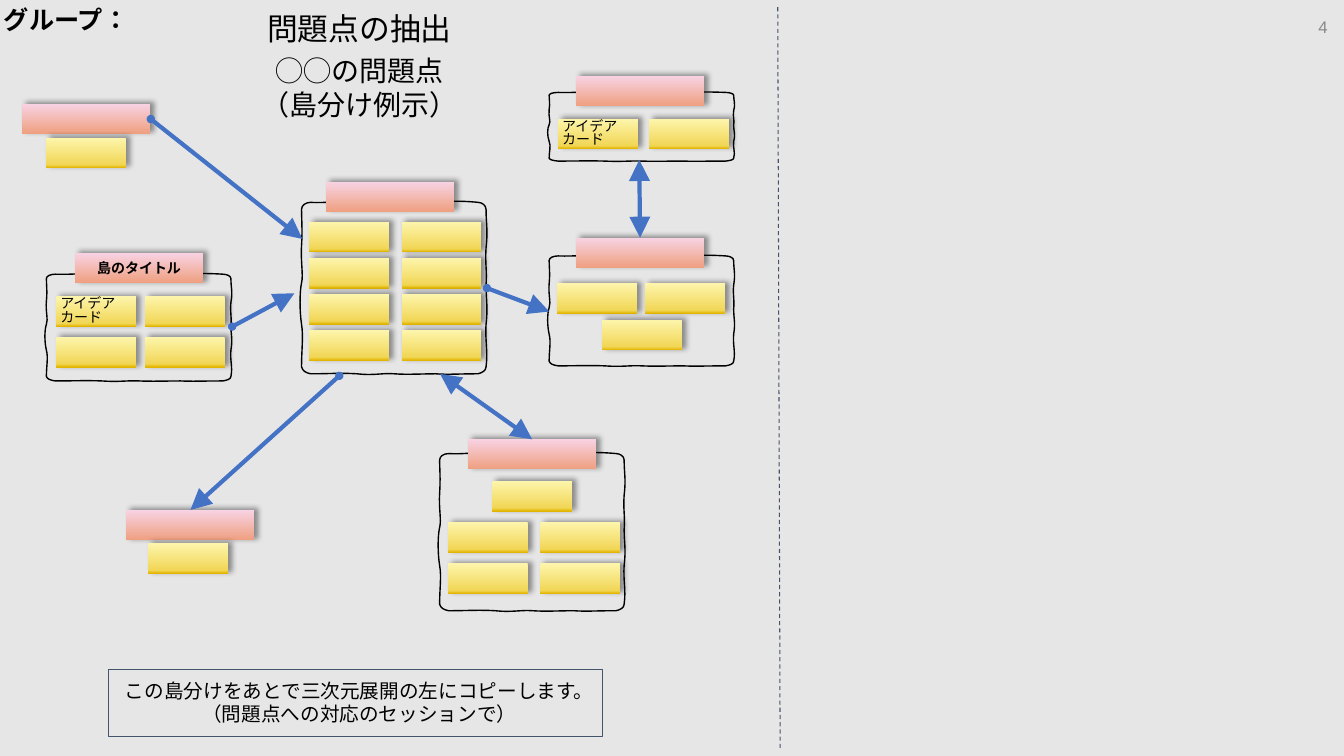
"""Build a slide of idea cards sorted into linked islands."""
from itertools import product
from lxml.etree import SubElement
from pptx import Presentation
from pptx.dml.color import RGBColor
from pptx.enum.dml import MSO_LINE
from pptx.enum.lang import MSO_LANGUAGE_ID
from pptx.enum.shapes import MSO_CONNECTOR, MSO_SHAPE
from pptx.enum.text import MSO_ANCHOR, PP_ALIGN
from pptx.oxml import parse_xml
from pptx.oxml.ns import nsdecls, qn
from pptx.util import Cm, Pt

HUES = {"back": "E7E6E6", "ink": "000000", "rule": "44546A",
        "arrow": "4472C4", "page": "888888"}
CARD = [(0, "FDF5AC"), (90, "F1D656"), (100, "E3B500")]
TITLE = [(0, "F8D3E4"), (100, "EFA081")]
WIDE, TALL = 4.65, 0.76
CARD_W, TITLE_W = 2.01, 3.23

CURVES = [
    (0, 3, 4, 0, 9, 0), (27, 1, 31, -2, 52, 0), (73, 1, 71, -1, 90, 0),
    (109, 1, 119, 1, 128, 0), (138, -1, 156, -2, 175, 0),
    (179, 0, 183, 3, 183, 7), (183, 22, 185, 27, 183, 45),
    (182, 62, 184, 66, 183, 82), (183, 97, 185, 103, 183, 121),
    (182, 138, 185, 147, 183, 163), (183, 167, 179, 169, 175, 170),
    (155, 170, 145, 171, 133, 170), (121, 170, 104, 171, 92, 170),
    (80, 169, 73, 172, 55, 170), (38, 169, 28, 170, 9, 170),
    (4, 169, 1, 167, 0, 163), (0, 146, 2, 133, 0, 121),
    (-2, 108, -2, 89, 0, 80), (2, 72, -1, 59, 0, 43), (1, 27, 0, 16, 0, 7)]


def hue(name):
    """Return a named colour."""
    return RGBColor.from_string(HUES[name])


def write(shape, text, size, align=PP_ALIGN.LEFT, bold=False, inset=0.1,
          anchor=MSO_ANCHOR.TOP, tone="ink", lead=None):
    """Set text in a shape and format its runs."""
    frame = shape.text_frame
    frame.text = text
    frame.word_wrap = True
    frame.vertical_anchor = anchor
    frame.margin_left = frame.margin_right = Cm(inset)
    frame.margin_top = frame.margin_bottom = Cm(inset)
    for para in frame.paragraphs:
        para.alignment = align
        if lead:
            para.line_spacing = lead
        for run in para.runs:
            run.font.size = Pt(size)
            run.font.name = "Arial"
            run.font.bold = bold
            run.font.language_id = MSO_LANGUAGE_ID.JAPANESE
            run.font.color.rgb = hue(tone)


def label(slide, box, text, size, **style):
    """Add a text box."""
    write(slide.shapes.add_textbox(*map(Cm, box)), text, size, **style)


def plate(slide, box, stops):
    """Add a shaded rectangle with a soft shadow."""
    shape = slide.shapes.add_shape(MSO_SHAPE.RECTANGLE, *map(Cm, box))
    shape.line.fill.background()
    shape.shadow.inherit = False
    props = shape.element.spPr
    marks = "".join(f'<a:gs pos="{at * 1000}"><a:srgbClr val="{tone}"/></a:gs>'
                    for at, tone in stops)
    props.insert(2, parse_xml(
        f'<a:gradFill {nsdecls("a")} rotWithShape="1"><a:gsLst>{marks}</a:gsLst>'
        '<a:lin ang="5400000" scaled="0"/></a:gradFill>'))
    props.find(qn("a:effectLst")).append(parse_xml(
        f'<a:outerShdw {nsdecls("a")} blurRad="{Pt(4)}" dist="{Pt(3)}" '
        'dir="20400000" algn="ctr" rotWithShape="0"><a:srgbClr val="000000">'
        '<a:alpha val="40000"/></a:srgbClr></a:outerShdw>'))
    return shape


def outline(slide, left, top, high):
    """Draw the wavy border of an island."""
    def scale(x, y):
        return Cm(x * WIDE / 183), Cm(y * high / 170)

    pen = slide.shapes.build_freeform(*scale(0, 7))
    pen.add_line_segments([scale(*curve[4:]) for curve in CURVES], close=True)
    shape = pen.convert_to_shape(Cm(left), Cm(top))
    for side, curve in zip(list(shape.element.iter(qn("a:lnTo"))), CURVES):
        side.tag = qn("a:cubicBezTo")
        for i in (2, 0):
            x, y = scale(*curve[i:i + 2])
            side.insert(0, parse_xml(
                f'<a:pt {nsdecls("a")} x="{x}" y="{y}"/>'))
    shape.shadow.inherit = False
    shape.fill.background()
    shape.line.color.rgb = hue("ink")
    shape.line.width = Pt(1)


def island(slide, left, top, high, head, cards, title="", idea=""):
    """Place a title and cards inside an optional border."""
    if high:
        outline(slide, left, top, high)
    bar = plate(slide, (left + head[0], top + head[1], TITLE_W, TALL), TITLE)
    if title:
        write(bar, title, 10, PP_ALIGN.CENTER, True, anchor=MSO_ANCHOR.MIDDLE)
    for i, (x, y) in enumerate(cards):
        card = plate(slide, (left + x, top + y, CARD_W, TALL), CARD)
        if idea and i == 0:
            write(card, idea, 10, anchor=MSO_ANCHOR.MIDDLE, lead=0.8)


def link(slide, ends, tone, width, head=None, tail=None):
    """Draw a straight line with optional end marks."""
    line = slide.shapes.add_connector(MSO_CONNECTOR.STRAIGHT, *map(Cm, ends))
    line.line.color.rgb = hue(tone)
    line.line.width = Pt(width)
    for tag, kind in (("a:headEnd", head), ("a:tailEnd", tail)):
        if kind:
            size = "sm" if kind == "oval" else "lg"
            SubElement(line.line._get_or_add_ln(), qn(tag), type=kind,
                       w=size, len=size)
    SubElement(line.element.spPr, qn("a:effectLst"))
    return line


def banner(slide):
    """Add the headings, page number and divider."""
    mid = PP_ALIGN.CENTER
    rule = link(slide, (19.6, 0.18, 19.66, 18.9), "rule", 0.75)
    rule.line.dash_style = MSO_LINE.DASH
    label(slide, (0, 0, 7.16, 1.24), "グループ：", 18, bold=True)
    label(slide, (6.1, 0, 5.92, 1.45), "問題点の抽出", 22, align=mid, inset=0.25)
    label(slide, (3.28, 1.25, 11.58, 1.24), "◯◯の問題点\n（島分け例示）", 20,
          align=mid)
    label(slide, (26.09, 0.17, 7.62, 1.02), "4", 12, align=PP_ALIGN.RIGHT,
          inset=0.25, anchor=MSO_ANCHOR.MIDDLE, tone="page")


def footer(slide, left, top):
    """Add the framed remark at the bottom."""
    box = slide.shapes.add_shape(MSO_SHAPE.RECTANGLE, Cm(left), Cm(top),
                                 Cm(12.45), Cm(1.68))
    box.shadow.inherit = False
    box.fill.solid()
    box.fill.fore_color.rgb = hue("back")
    box.line.color.rgb = hue("rule")
    box.line.width = Pt(0.75)
    label(slide, (left, top - 0.02, 12.64, 1.7),
          "この島分けをあとで三次元展開の左にコピーします。\n"
          "（問題点への対応のセッションで）", 14, align=PP_ALIGN.CENTER, inset=0.25)


def chart(slide):
    """Place all islands and the arrows between them."""
    idea = "アイデア\nカード"
    island(slide, 0.56, 2.61, 0, (0, 0), [(0.6, 0.86)])
    island(slide, 3.18, 12.85, 0, (0, 0), [(0.56, 0.84)])
    island(slide, 1.17, 6.91, 2.69, (0.72, -0.54),
           [(x, y) for y, x in product((0.56, 1.58), (0.25, 2.48))],
           "島のタイトル", idea)
    island(slide, 7.6, 5.1, 4.32, (0.62, -0.52),
           [(x, 0.49 + 0.91 * i) for i, x in product(range(4), (0.19, 2.52))])
    island(slide, 13.84, 2.33, 1.73, (0.68, -0.42),
           [(0.23, 0.66), (2.52, 0.66)], idea=idea)
    island(slide, 13.84, 6.45, 2.77, (0.68, -0.46),
           [(0.2, 0.69), (2.42, 0.69), (1.33, 1.61)])
    island(slide, 11.08, 11.43, 3.96, (0.72, -0.37),
           [(1.33, 0.69)] + [(x, y) for y, x in
                             product((1.73, 2.77), (0.21, 2.54))])
    for ends in ((3.8, 3, 7.62, 6.02), (8.55, 9.47, 4.8, 12.85),
                 (12.27, 7.26, 13.84, 7.85), (5.85, 8.23, 7.42, 7.39)):
        link(slide, ends, "arrow", 3, "oval", "triangle")
    for ends in ((16.13, 5.99, 16.11, 4.03), (13.41, 11.07, 11.09, 9.42)):
        link(slide, ends, "arrow", 3, "triangle", "triangle")


def main():
    """Build and save the slide."""
    deck = Presentation()
    deck.slide_width, deck.slide_height = Cm(33.87), Cm(19.05)
    slide = deck.slides.add_slide(deck.slide_layouts[6])
    slide.background.fill.solid()
    slide.background.fill.fore_color.rgb = hue("back")
    banner(slide)
    footer(slide, 2.74, 16.87)
    chart(slide)
    deck.save("out.pptx")


if __name__ == "__main__":
    main()
